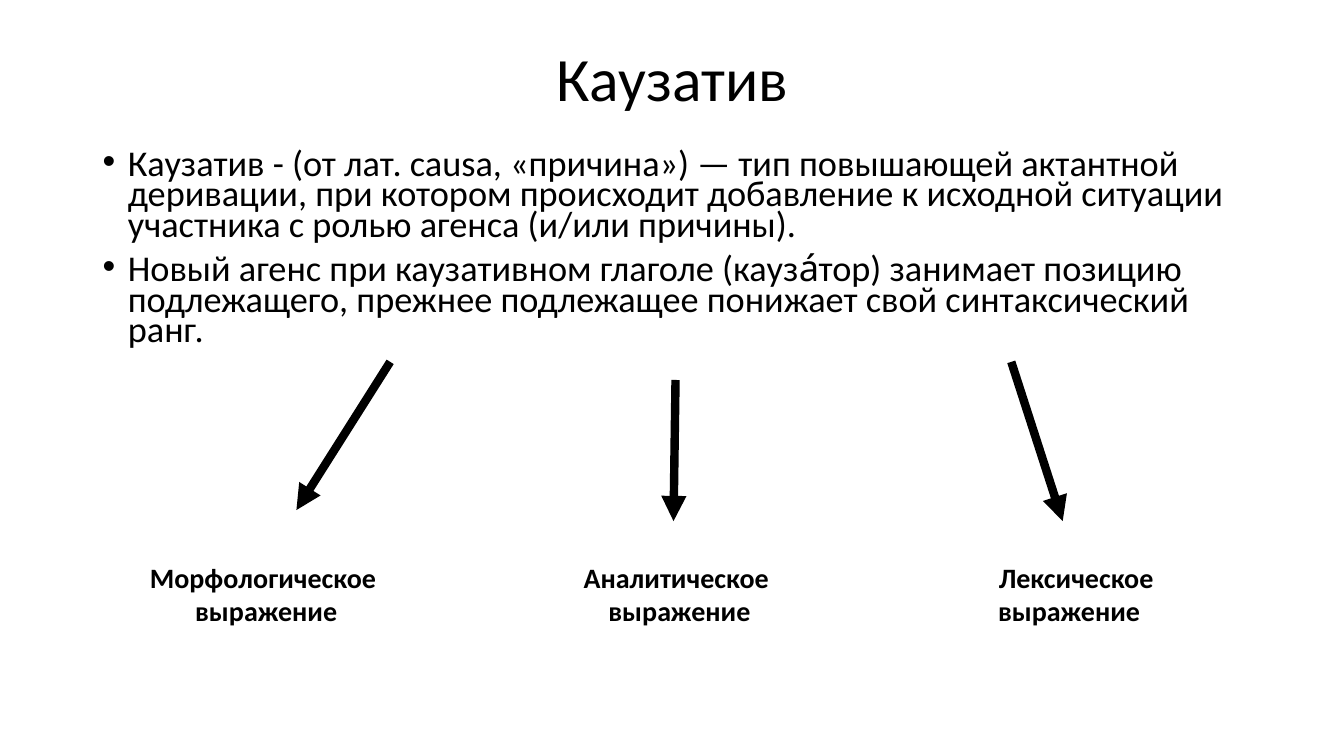
"""Build the slide on the causative and its three kinds of expression."""
from typing import NamedTuple

from lxml import etree
from pptx import Presentation
from pptx.dml.color import RGBColor
from pptx.enum.shapes import MSO_CONNECTOR
from pptx.enum.text import MSO_ANCHOR, MSO_AUTO_SIZE, PP_ALIGN
from pptx.oxml.ns import qn
from pptx.util import Inches, Pt

CENTER, LEFT = PP_ALIGN.CENTER, PP_ALIGN.LEFT
MIDDLE, TOP = MSO_ANCHOR.MIDDLE, MSO_ANCHOR.TOP
NO_FIT, GROW = MSO_AUTO_SIZE.NONE, MSO_AUTO_SIZE.SHAPE_TO_FIT_TEXT
STRAIGHT = MSO_CONNECTOR.STRAIGHT
FONT, BLACK = "Calibri", "000000"
GRID_STEP = 0.1
TEXT_LEFT, TEXT_WIDTH = 9.2, 115
LABEL_TOP, LABEL_HEIGHT = 55.1, 7.7
BULLET_INDENT = 2.5

TITLE = "Каузатив"
DEFINITIONS = (
    "Каузатив - (от лат. causa, «причина») — тип повышающей актантной деривации, "
    "при котором происходит добавление к исходной ситуации участника с ролью агенса "
    "(и/или причины).",
    "Новый агенс при каузативном глаголе (кауза́тор) занимает позицию подлежащего, "
    "прежнее подлежащее понижает свой синтаксический ранг.",
)


class Line(NamedTuple):
    """A line of a label and its alignment."""
    text: str
    align: PP_ALIGN


class Branch(NamedTuple):
    """An arrow and the label under it, in grid columns and rows."""
    start: tuple[float, float]
    end: tuple[float, float]
    label_left: float
    label_width: float
    lines: tuple[Line, Line]


BRANCHES = (
    Branch((38.7, 35.9), (29.4, 50.6), 13.8, 25.2,
           (Line("Морфологическое ", CENTER), Line("выражение", CENTER))),
    Branch((67, 37.7), (66.8, 51.7), 56.9, 20.5,
           (Line("Аналитическое", LEFT), Line(" выражение", CENTER))),
    Branch((100.3, 35.9), (105.4, 51.7), 98, 18.1,
           (Line("Лексическое ", CENTER), Line("выражение", LEFT))),
)


def grid(*steps: float) -> list[Inches]:
    """Turn grid steps into lengths."""
    return [Inches(step * GRID_STEP) for step in steps]


def color(value: str) -> RGBColor:
    """Turn a hex string into a colour."""
    return RGBColor.from_string(value)


def add_span(para, text: str, size: float, bold: bool = False) -> None:
    """Add one formatted run to a paragraph."""
    span = para.add_run()
    span.text = text
    span.font.name, span.font.size, span.font.bold = FONT, Pt(size), bold
    span.font.color.rgb = color(BLACK)


def next_para(frame, index: int):
    """Return the first paragraph, or a new one after it."""
    return frame.add_paragraph() if index else frame.paragraphs[0]


def add_title(page) -> None:
    """Place and fill the title placeholder."""
    box = page.shapes.title
    box.left, box.top, box.width, box.height = grid(TEXT_LEFT, 4, TEXT_WIDTH, 8.1)
    frame = box.text_frame
    frame.vertical_anchor, frame.auto_size = MIDDLE, NO_FIT
    para = frame.paragraphs[0]
    para.alignment, para.line_spacing = CENTER, 0.9
    add_span(para, TITLE, 44)


def add_definitions(page) -> None:
    """Add the bulleted definitions."""
    box = page.shapes.add_textbox(*grid(TEXT_LEFT, 14.6, TEXT_WIDTH, 21.3))
    frame = box.text_frame
    frame.word_wrap, frame.vertical_anchor = True, TOP
    indent, = grid(BULLET_INDENT)
    for index, text in enumerate(DEFINITIONS):
        para = next_para(frame, index)
        para.alignment, para.line_spacing, para.space_before = LEFT, 0.7, Pt(10)
        add_span(para, text, 25.9)
        properties = para._p.get_or_add_pPr()
        properties.set("marL", str(indent))
        properties.set("indent", str(-indent))
        etree.SubElement(properties, qn("a:buFont"), typeface="Arial")
        etree.SubElement(properties, qn("a:buChar"), char="•")


def add_arrow(page, branch: Branch) -> None:
    """Add the arrow of a branch."""
    arrow = page.shapes.add_connector(STRAIGHT, *grid(*branch.start, *branch.end))
    arrow.line.width = Pt(6)
    arrow.line.color.rgb = color(BLACK)
    etree.SubElement(arrow.line._get_or_add_ln(), qn("a:tailEnd"), type="triangle")
    etree.SubElement(arrow._element.spPr, qn("a:effectLst"))


def add_label(page, branch: Branch) -> None:
    """Add the bold label of a branch."""
    box = page.shapes.add_textbox(
        *grid(branch.label_left, LABEL_TOP, branch.label_width, LABEL_HEIGHT))
    frame = box.text_frame
    frame.word_wrap, frame.auto_size = False, GROW
    for index, line in enumerate(branch.lines):
        para = next_para(frame, index)
        para.alignment = line.align
        add_span(para, line.text, 20, bold=True)


def main() -> None:
    """Build and save the deck."""
    deck = Presentation()
    deck.slide_width, deck.slide_height = Inches(13.33), Inches(7.5)
    page = deck.slides.add_slide(deck.slide_layouts.get_by_name("Title Only"))
    add_title(page)
    add_definitions(page)
    for branch in BRANCHES:
        add_arrow(page, branch)
        add_label(page, branch)
    deck.save("out.pptx")


if __name__ == "__main__":
    main()
